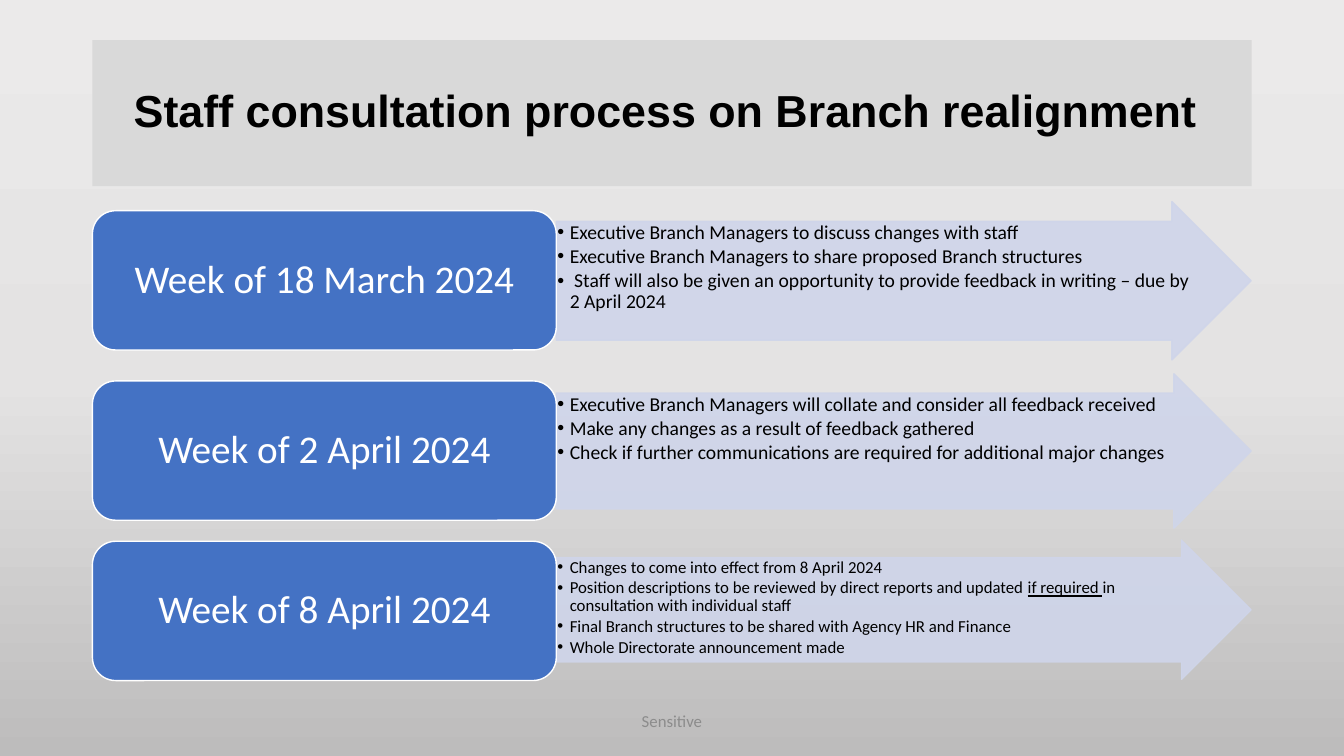
from lxml import etree
from pptx import Presentation
from pptx.dml.color import RGBColor
from pptx.enum.shapes import MSO_SHAPE
from pptx.enum.text import MSO_ANCHOR, MSO_AUTO_SIZE, PP_ALIGN
from pptx.oxml.ns import qn
from pptx.util import Cm, Pt

ARROW = MSO_SHAPE.RIGHT_ARROW
ROUNDED = MSO_SHAPE.ROUNDED_RECTANGLE
MIDDLE = MSO_ANCHOR.MIDDLE
TOP = MSO_ANCHOR.TOP
CENTER = PP_ALIGN.CENTER
LEFT = PP_ALIGN.LEFT
NO_AUTOFIT = MSO_AUTO_SIZE.NONE

COLORS = {
    "banner": "D9D9D9",
    "arrow": "CFD5EA",
    "week": "4472C4",
    "white": "FFFFFF",
    "black": "000000",
    "footer": "8C8C8C",
}
BACKGROUND_STOPS = [(0, "EBEAEA"), (50, "E4E3E3"), (100, "BDBCBC")]

WEEKS = [
    ("Week of 18 March 2024", 5.31, 5.08, 3.99, 14, [
        ["Executive Branch Managers to discuss changes with staff"],
        ["Executive Branch Managers to share proposed Branch structures"],
        [" Staff will also be given an opportunity to provide feedback in writing – due by 2 April 2024"],
    ]),
    ("Week of 2 April 2024", 9.6, 9.42, 3.89, 14, [
        ["Executive Branch Managers will collate and consider all feedback received"],
        ["Make any changes as a result of feedback gathered"],
        ["Check if further communications are required for additional major changes"],
    ]),
    ("Week of 8 April 2024", 13.64, 13.61, 3.51, 12, [
        ["Changes to come into effect from 8 April 2024"],
        ["Position descriptions to be reviewed by direct reports and updated ",
         "if required ",
         "in consultation with individual staff"],
        ["Final Branch structures to be shared with Agency HR and Finance"],
        ["Whole Directorate announcement made"],
    ]),
]


def add_span(para, text, size, color, font="Calibri"):
    span = para.add_run()
    span.text = text
    span.font.name = font
    span.font.size = Pt(size)
    span.font.color.rgb = RGBColor.from_string(COLORS[color])
    return span


def add_block(kind, left, top, width, height, fill, line, anchor, inset_x, inset_y):
    block = page.shapes.add_shape(kind, Cm(left), Cm(top), Cm(width), Cm(height))
    block.shadow.inherit = False
    block.fill.solid()
    block.fill.fore_color.rgb = RGBColor.from_string(COLORS[fill])
    block.line.color.rgb = RGBColor.from_string(COLORS[line])
    block.line.width = Pt(1)
    frame = block.text_frame
    frame.word_wrap = True
    frame.vertical_anchor = anchor
    frame.margin_left = frame.margin_right = Cm(inset_x)
    frame.margin_top = frame.margin_bottom = Cm(inset_y)
    return block


deck = Presentation()
deck.slide_width = Cm(33.87)
deck.slide_height = Cm(19.05)
page = deck.slides.add_slide(deck.slide_layouts[5])

background = page.background.fill
background.gradient()
background.gradient_angle = 270
stop_list = next(page.background._cSld.iter(qn("a:gsLst")))
for stop in list(stop_list):
    stop_list.remove(stop)
for position, color in BACKGROUND_STOPS:
    stop = etree.SubElement(stop_list, qn("a:gs"), pos=str(position * 1000))
    etree.SubElement(stop, qn("a:srgbClr"), val=color)

title = page.shapes.title
title.left, title.top, title.width, title.height = Cm(2.33), Cm(1.01), Cm(29.21), Cm(3.68)
title.fill.solid()
title.fill.fore_color.rgb = RGBColor.from_string(COLORS["banner"])
title.text_frame.auto_size = NO_AUTOFIT
title.text_frame.word_wrap = True
title.text_frame.vertical_anchor = MIDDLE
para = title.text_frame.paragraphs[0]
para.alignment = CENTER
para.line_spacing = 0.9
span = add_span(para, "Staff consultation process on Branch realignment ", 32, "black", "Arial")
span.font.bold = True

for week, week_top, arrow_top, arrow_height, size, actions in WEEKS:
    arrow = add_block(ARROW, 14.02, arrow_top, 17.51, arrow_height, "arrow", "arrow", TOP, 0.03, 0.03)
    arrow.adjustments[0] = 0.75
    arrow.adjustments[1] = 0.5
    for color in arrow._element.spPr.iter(qn("a:srgbClr")):
        etree.SubElement(color, qn("a:alpha"), val="90000")
    frame = arrow.text_frame
    for index, action in enumerate(actions):
        para = frame.add_paragraph() if index else frame.paragraphs[0]
        para.level = 1
        para.alignment = LEFT
        para.line_spacing = 0.9
        para.space_after = Pt(round(size * 0.15, 1))
        properties = para._p.get_or_add_pPr()
        properties.set("marL", str(Cm(0.31)))
        properties.set("indent", str(-Cm(0.31)))
        etree.SubElement(properties, qn("a:buFont"), typeface="Arial")
        etree.SubElement(properties, qn("a:buChar"), char="•")
        for text in action:
            span = add_span(para, text, size, "black")
            if text == "if required ":
                span.font.underline = True

    box = add_block(ROUNDED, 2.33, week_top, 11.69, 3.51, "week", "white", MIDDLE, 0.3, 0.15)
    para = box.text_frame.paragraphs[0]
    para.alignment = CENTER
    para.line_spacing = 0.9
    add_span(para, week, 28, "white")

footer = page.shapes.add_textbox(Cm(11.22), Cm(17.66), Cm(11.43), Cm(1.01))
footer.text_frame.word_wrap = True
footer.text_frame.vertical_anchor = MIDDLE
para = footer.text_frame.paragraphs[0]
para.alignment = CENTER
add_span(para, "Sensitive", 12, "footer")

deck.save("out.pptx")
